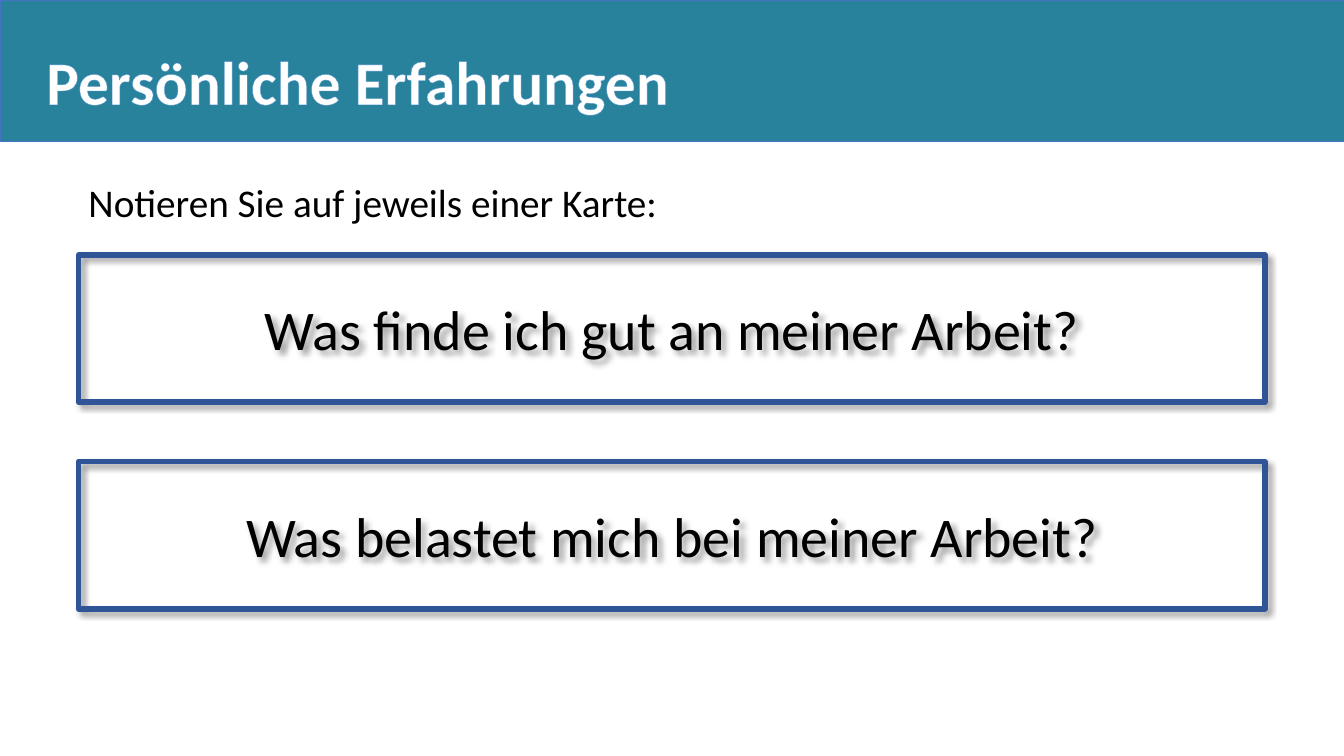
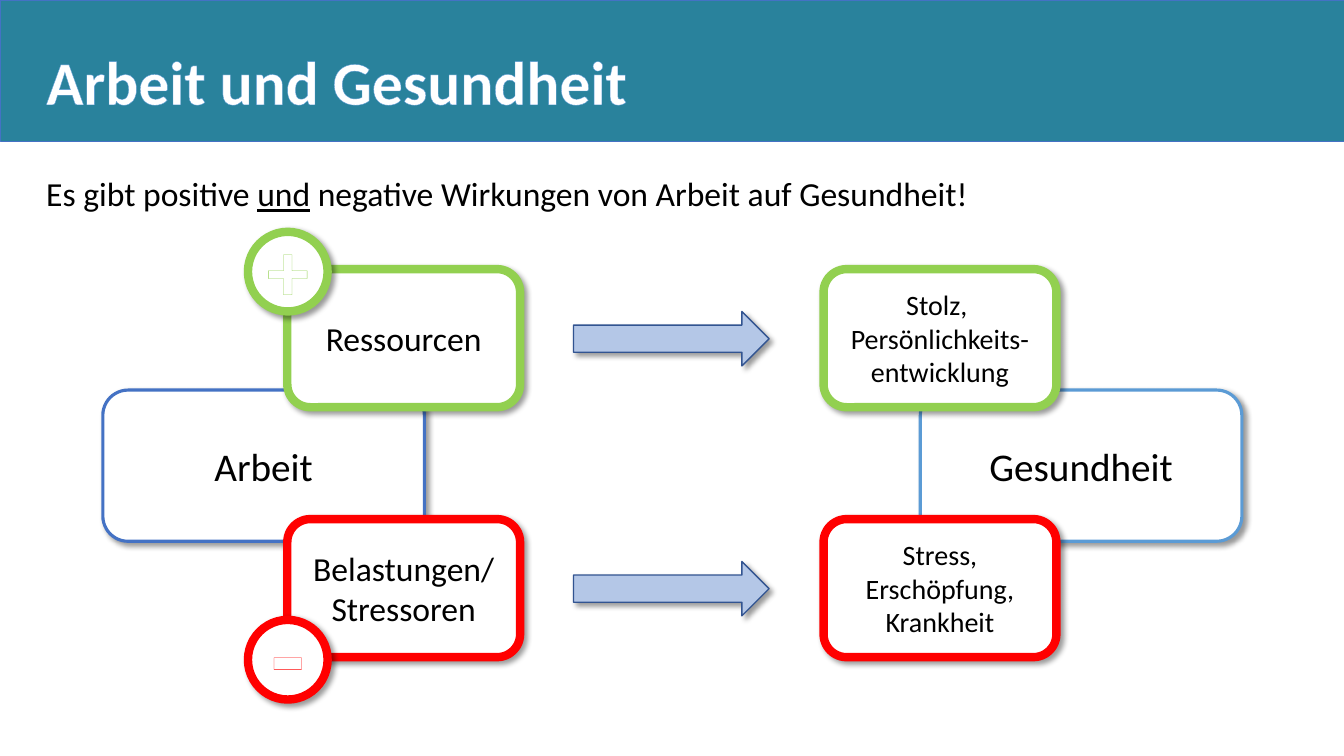
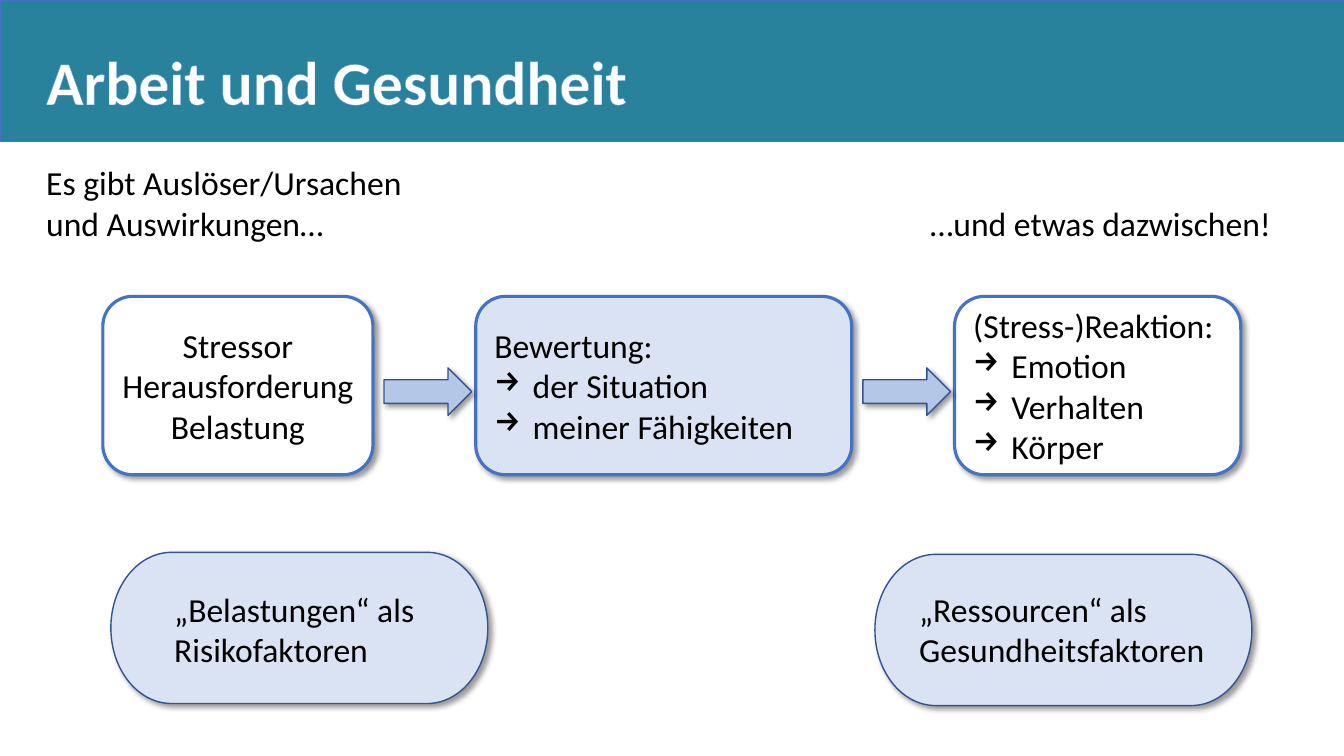
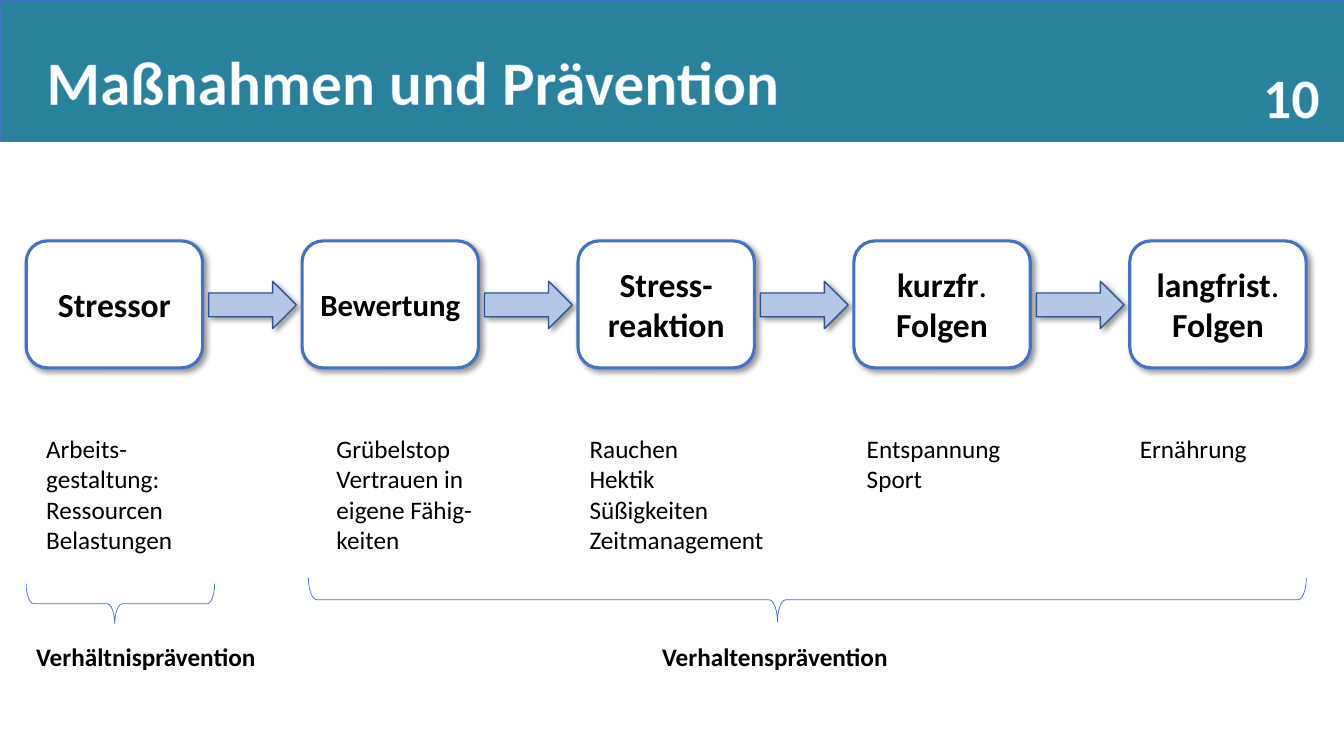
from dataclasses import dataclass

from lxml import etree
from pptx import Presentation
from pptx import util as u
from pptx.dml.color import RGBColor
from pptx.enum import shapes, text
from pptx.oxml import ns

CELL = u.Inches(0.1)
COLUMNS, ROWS = 133.33, 75


@dataclass(frozen=True)
class Theme:
    font: str = "Calibri"
    black: str = "000000"
    white: str = "FFFFFF"
    band: str = "29829C"
    blue: str = "4472C4"
    sky: str = "5B9BD5"
    navy: str = "2F5597"
    edge: str = "325491"
    arrow: str = "B4C7E7"
    pale: str = "DAE3F3"
    green: str = "92D050"
    red: str = "FF0000"
    minus: int = 80
    plus: int = 60
    title: int = 44
    question: int = 40
    large: int = 28
    body: int = 24
    compact: int = 22
    small: int = 20
    note: int = 18


THEME = Theme()
SHAPE = shapes.MSO_SHAPE
ALIGN = text.PP_ALIGN
ANCHOR = text.MSO_ANCHOR
GROW = text.MSO_AUTO_SIZE.SHAPE_TO_FIT_TEXT


def add_xml(parent, tag, **attributes):
    return etree.SubElement(parent, ns.qn(tag), attributes)


class Deck:
    def __init__(self, theme):
        self.theme = theme
        self.presentation = Presentation()
        self.presentation.slide_width = u.Emu(round(COLUMNS * CELL))
        self.presentation.slide_height = u.Emu(ROWS * CELL)
        self.slide = None

    def new_slide(self, title, title_width):
        self.slide = self.presentation.slides.add_slide(self.presentation.slide_layouts[6])
        self.shape(SHAPE.RECTANGLE, (0, 0, COLUMNS, 14), self.theme.band,
                   self.theme.blue, 0.5, shadow=False)
        self.heading(title, (3.6, 3.8, title_width, 8.4), self.theme.title)

    def frame(self, box):
        return [u.Emu(round(cells * CELL)) for cells in box]

    def shape(self, kind, box, fill, line, weight, shadow=True):
        shape = self.slide.shapes.add_shape(kind, *self.frame(box))
        shape.shadow.inherit = False
        if fill:
            shape.fill.solid()
            shape.fill.fore_color.rgb = RGBColor.from_string(fill)
        else:
            shape.fill.background()
        shape.line.color.rgb = RGBColor.from_string(line)
        shape.line.width = u.Pt(weight)
        if shadow:
            self.drop_shadow(shape)
        return shape

    def drop_shadow(self, shape):
        effects = shape._element.spPr.find(ns.qn("a:effectLst"))
        outer = add_xml(effects, "a:outerShdw", blurRad=str(u.Pt(4)), dist=str(u.Pt(3)),
                        dir="2700000", algn="tl", rotWithShape="0")
        color = add_xml(outer, "a:srgbClr", val=self.theme.black)
        add_xml(color, "a:alpha", val="40000")

    def put_words(self, shape, words, size, bold=False, align=ALIGN.LEFT, color=None):
        for index, line in enumerate(words.split("\n")):
            frame = shape.text_frame
            paragraph = frame.add_paragraph() if index else frame.paragraphs[0]
            paragraph.alignment = align
            if line.startswith("→ "):
                line = line[2:]
                self.arrow_bullet(paragraph)
            font = paragraph.font
            font.name, font.size, font.bold = self.theme.font, u.Pt(size), bold
            font.color.rgb = RGBColor.from_string(color or self.theme.black)
            for position, piece in enumerate(line.split("|")):
                run = paragraph.add_run()
                run.text = piece
                if position % 2 and bold:
                    run.font.bold = False
                elif position % 2:
                    run.font.underline = True

    def arrow_bullet(self, paragraph):
        properties = paragraph._p.get_or_add_pPr()
        indent = u.Inches(0.38)
        properties.set("marL", str(indent))
        properties.set("indent", str(-indent))
        add_xml(properties, "a:buChar", char="→")

    def outline(self, shape, color, weight):
        for paragraph in shape.text_frame.paragraphs:
            for run in paragraph.runs:
                line = etree.Element(ns.qn("a:ln"), w=str(u.Pt(weight)))
                add_xml(add_xml(line, "a:solidFill"), "a:srgbClr", val=color)
                run._r.get_or_add_rPr().insert(0, line)

    def text(self, words, box, size, wrap=False, anchor=ANCHOR.TOP, fit=GROW, **style):
        shape = self.slide.shapes.add_textbox(*self.frame(box))
        shape.text_frame.word_wrap = wrap
        shape.text_frame.auto_size = fit
        shape.text_frame.vertical_anchor = anchor
        self.put_words(shape, words, size, **style)
        return shape

    def heading(self, words, box, size, **style):
        shape = self.text(words, box, size, bold=True, color=self.theme.white, **style)
        self.outline(shape, self.theme.sky, 0.8)

    def card(self, words, box, size, line=THEME.blue, weight=2.25, fill=THEME.white,
             kind=SHAPE.ROUNDED_RECTANGLE, align=ALIGN.CENTER, **style):
        shape = self.shape(kind, box, fill, line, weight)
        shape.text_frame.word_wrap = True
        shape.text_frame.vertical_anchor = ANCHOR.MIDDLE
        self.put_words(shape, words, size, align=align, **style)
        return shape

    def badge(self, sign, top, size, color, bottom_inset):
        shape = self.card(sign, (24.6, top, 7.9, 7.9), size, color, 6, kind=SHAPE.OVAL,
                          bold=True, color=self.theme.white)
        frame = shape.text_frame
        frame.margin_left = frame.margin_top = frame.margin_right = 0
        frame.margin_bottom = u.Inches(bottom_inset)
        self.outline(shape, color, 1.25)

    def arrow(self, left, top, width=8.7, height=4.7):
        self.shape(SHAPE.RIGHT_ARROW, (left, top, width, height),
                   self.theme.arrow, self.theme.edge, 1)

    def terminator(self, box):
        self.shape(SHAPE.FLOWCHART_TERMINATOR, box, self.theme.pale, self.theme.edge, 1)

    def brace(self, left, top, width, height):
        middle, center = left + width / 2, top + height / 2
        box = (middle - height / 2, center - width / 2, height, width)
        shape = self.shape(SHAPE.LEFT_BRACE, box, None, self.theme.blue, 0.5, shadow=False)
        shape.rotation = 270
        shape.adjustments[0], shape.adjustments[1] = 0.19, 0.47


def experiences(deck):
    theme = deck.theme
    deck.new_slide("Persönliche Erfahrungen", 64.4)
    deck.text("Notieren Sie auf jeweils einer Karte:", (7.8, 17.2, 117.7, 5.7), theme.large,
              wrap=True, anchor=ANCHOR.MIDDLE)
    questions = ("Was finde ich gut an meiner Arbeit?", "Was belastet mich bei meiner Arbeit?")
    for row, question in enumerate(questions):
        deck.card(question, (7.8, 25.3 + row * 20.5, 117.7, 14.6), theme.question,
                  theme.navy, 4, fill=None, kind=SHAPE.RECTANGLE)


def effects(deck):
    theme = deck.theme
    deck.new_slide("Arbeit und Gesundheit", 60.2)
    deck.card("Arbeit", (10.2, 38.7, 31.9, 15), theme.large)
    deck.card("Gesundheit", (91.3, 38.7, 31.9, 15), theme.large, theme.sky)
    rows = (
        (theme.green, "Ressourcen", "Stolz, \nPersönlichkeits-entwicklung"),
        (theme.red, "Belastungen/ Stressoren", "Stress, Erschöpfung, Krankheit"),
    )
    for row, (color, cause, effect) in enumerate(rows):
        top = 26.7 + row * 24.8
        deck.card(cause, (28.5, top, 23.1, 13.7), theme.body, color, 6)
        deck.card(effect, (81.7, top, 23.1, 13.7), theme.small, color, 6)
        deck.arrow(56.9, top + 4.2, 19.4, 5.4)
    deck.badge("+", 23, theme.plus, theme.green, 0.08)
    deck.badge("-", 61.5, theme.minus, theme.red, 0.18)
    deck.text("Es gibt positive |und| negative Wirkungen von Arbeit auf Gesundheit!",
              (3.6, 16.7, 94.4, 5), theme.body)


def appraisal(deck):
    theme = deck.theme
    deck.new_slide("Arbeit und Gesundheit", 60.2)
    deck.text("Es gibt Auslöser/Ursachen\nund Auswirkungen…", (3.6, 15.6, 38.4, 9.1), theme.body)
    deck.text("…und etwas dazwischen!", (91.3, 19.6, 36.2, 5), theme.body)
    steps = (
        (10.2, 26.8, theme.white, ALIGN.CENTER, "Stressor\nHerausforderung\nBelastung"),
        (47.2, 37.3, theme.pale, ALIGN.LEFT,
         "Bewertung:\n→ der Situation\n→ meiner Fähigkeiten"),
        (94.7, 28.4, theme.white, ALIGN.LEFT,
         "(Stress-)Reaktion:\n→ Emotion\n→ Verhalten\n→ Körper"),
    )
    for index, (left, width, fill, align, words) in enumerate(steps):
        deck.card(words, (left, 29.4, width, 17.7), theme.body, fill=fill, align=align)
        if index:
            deck.arrow(left - 9.1, 36.5)
    deck.terminator((11, 54.8, 37.4, 15))
    deck.text("„Belastungen“ als\nRisikofaktoren", (16.3, 57.9, 26.8, 9.1), theme.body)
    deck.terminator((86.8, 55, 37.4, 15))
    deck.text("„Ressourcen“ als\nGesundheitsfaktoren", (90.2, 57.9, 30.6, 9.1), theme.body)


def prevention(deck):
    theme = deck.theme
    deck.new_slide("Maßnahmen und Prävention", 75.5)
    deck.heading("10", (122.7, 3.8, 9.2, 11.4), theme.question, wrap=True,
                 anchor=ANCHOR.MIDDLE, fit=text.MSO_AUTO_SIZE.NONE, align=ALIGN.RIGHT)
    stages = (
        ("Stressor", theme.body, 3.6, 17.7, "Arbeits-gestaltung:\nRessourcen\nBelastungen"),
        ("Bewertung", theme.compact, 32.4, 17.7,
         "Grübelstop\nVertrauen in eigene Fähig-keiten"),
        ("Stress-reaktion", theme.body, 57.5, 20.1,
         "Rauchen\nHektik\nSüßigkeiten\nZeitmanagement"),
        ("kurzfr|. |Folgen", theme.body, 85, 20.1, "Entspannung\nSport"),
        ("langfrist|. |Folgen", theme.body, 112.1, 20.1, "Ernährung"),
    )
    for index, (stage, size, note_left, note_width, measures) in enumerate(stages):
        left = 2.6 + index * 27.37
        deck.card(stage, (left, 23.9, 17.5, 12.6), size, bold=True)
        if index < len(stages) - 1:
            deck.arrow(left + 18.1, 27.9)
        lines = measures.count("\n") + 1
        deck.text(measures, (note_left, 42.5, note_width, 1 + 3 * lines), theme.note, wrap=True)
    deck.brace(2.6, 57.9, 18.7, 4)
    deck.brace(30.6, 57.3, 99, 4.4)
    for left, label in ((2.6, "Verhältnisprävention"), (64.7, "Verhaltensprävention")):
        deck.text(label, (left, 63.1, 35.5, 4), theme.note, wrap=True, bold=True)


def main():
    deck = Deck(THEME)
    for build in (experiences, effects, appraisal, prevention):
        build(deck)
    deck.presentation.save("out.pptx")


if __name__ == "__main__":
    main()
